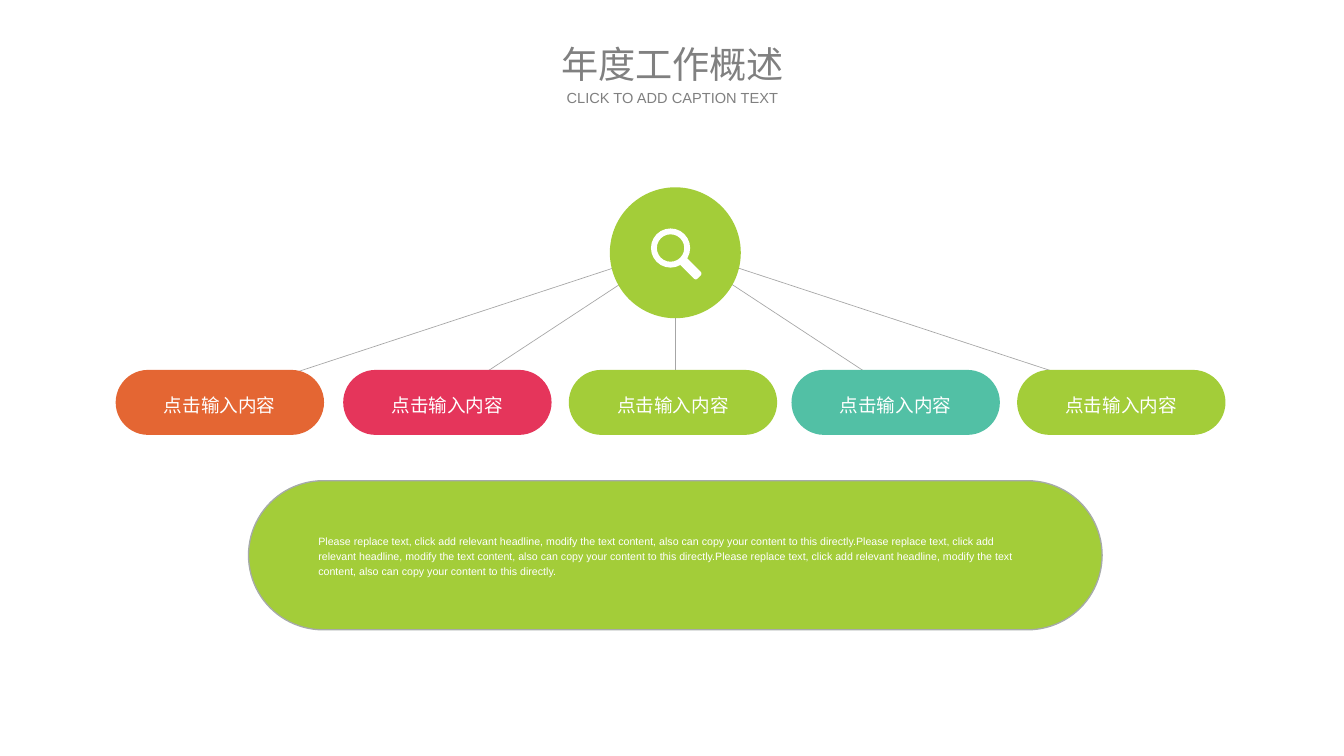
import pptx
import pptx.dml.color
import pptx.enum.shapes
import pptx.enum.text
import pptx.oxml.ns
import pptx.util
from lxml import etree

Inches = pptx.util.Inches
Pt = pptx.util.Pt
Shape = pptx.enum.shapes.MSO_SHAPE
Align = pptx.enum.text.PP_ALIGN

GREEN, WHITE, GREY = "A3CD39", "FFFFFF", "808080"
HUB_X, HUB_Y = 7.07, 2.59
TOPICS = [
    (1.21, "E46633"),
    (3.59, "E5355B"),
    (5.95, GREEN),
    (8.28, "52C0A5"),
    (10.64, GREEN),
]
DETAIL = (
    "Please replace text, click add relevant headline, modify the text content, "
    "also can copy your content to this directly."
)


def color(value):
    return pptx.dml.color.RGBColor.from_string(value)


def add_filled(shapes, kind, area, fill, adjustment=None):
    shape = shapes.add_shape(kind, *map(Inches, area))
    shape.shadow.inherit = False
    shape.fill.solid()
    shape.fill.fore_color.rgb = color(fill)
    shape.line.fill.background()
    if adjustment is not None:
        shape.adjustments[0] = adjustment
    return shape


def write_text(box, text, size, ink, align=Align.CENTER, spacing=None, before=None):
    frame = box.text_frame
    frame.word_wrap = True
    frame.vertical_anchor = pptx.enum.text.MSO_ANCHOR.MIDDLE
    frame.margin_left = frame.margin_right = Inches(0)
    frame.margin_top = frame.margin_bottom = Inches(0)
    para = frame.paragraphs[0]
    para.alignment = align
    para.line_spacing = spacing
    para.space_before = before
    span = para.add_run()
    span.text = text
    span.font.name = "Arial"
    span.font.size = Pt(size)
    span.font.color.rgb = color(ink)


def add_label(page, area, *text, **layout):
    box = page.shapes.add_textbox(*map(Inches, area))
    write_text(box, *text, **layout)


def add_spoke(page, end_x):
    spoke = page.shapes.add_connector(
        pptx.enum.shapes.MSO_CONNECTOR.STRAIGHT,
        Inches(HUB_X), Inches(HUB_Y), Inches(end_x), Inches(4.16),
    )
    spoke.line.color.rgb = color("A6A6A6")
    spoke.line.width = Pt(0.5)
    properties = spoke._element.spPr
    etree.SubElement(properties, pptx.oxml.ns.qn("a:effectLst"))


def add_topic(page, left, fill):
    pill = add_filled(page.shapes, Shape.ROUNDED_RECTANGLE, (left, 3.87, 2.18, 0.68), fill, 0.5)
    write_text(pill, "点击输入内容", 14, WHITE, spacing=1.2, before=Pt(10))


def add_search_hub(page):
    hub = page.shapes.add_group_shape()
    add_filled(hub.shapes, Shape.OVAL, (6.38, 1.96, 1.37, 1.37), GREEN)
    add_filled(hub.shapes, Shape.DONUT, (6.81, 2.39, 0.41, 0.41), WHITE, 0.15)
    handle = add_filled(hub.shapes, Shape.ROUNDED_RECTANGLE, (7.1, 2.76, 0.25, 0.1), WHITE, 0.25)
    handle.rotation = 45


def add_detail_panel(page):
    panel = add_filled(page.shapes, Shape.ROUNDED_RECTANGLE, (2.6, 5.03, 8.93, 1.56), GREEN, 0.5)
    panel.line.color.rgb = color("A6AAA9")
    panel.line.width = Pt(1)
    add_label(page, (3.33, 5.37, 7.38, 0.87), DETAIL * 3, 8, WHITE,
              align=Align.LEFT, spacing=1.2, before=Pt(10))


def main():
    deck = pptx.Presentation()
    deck.slide_width, deck.slide_height = Inches(14.06), Inches(7.91)
    page = deck.slides.add_slide(deck.slide_layouts[6])
    for index in range(len(TOPICS)):
        add_spoke(page, HUB_X + (index - 2) * 2.39)
    for left, fill in TOPICS:
        add_topic(page, left, fill)
    add_detail_panel(page)
    add_search_hub(page)
    add_label(page, (5.77, 0.42, 2.53, 0.49), "年度工作概述", 28, GREY)
    add_label(page, (5.77, 0.93, 2.53, 0.19), "CLICK TO ADD CAPTION TEXT", 11, GREY)
    deck.save("out.pptx")


if __name__ == "__main__":
    main()
